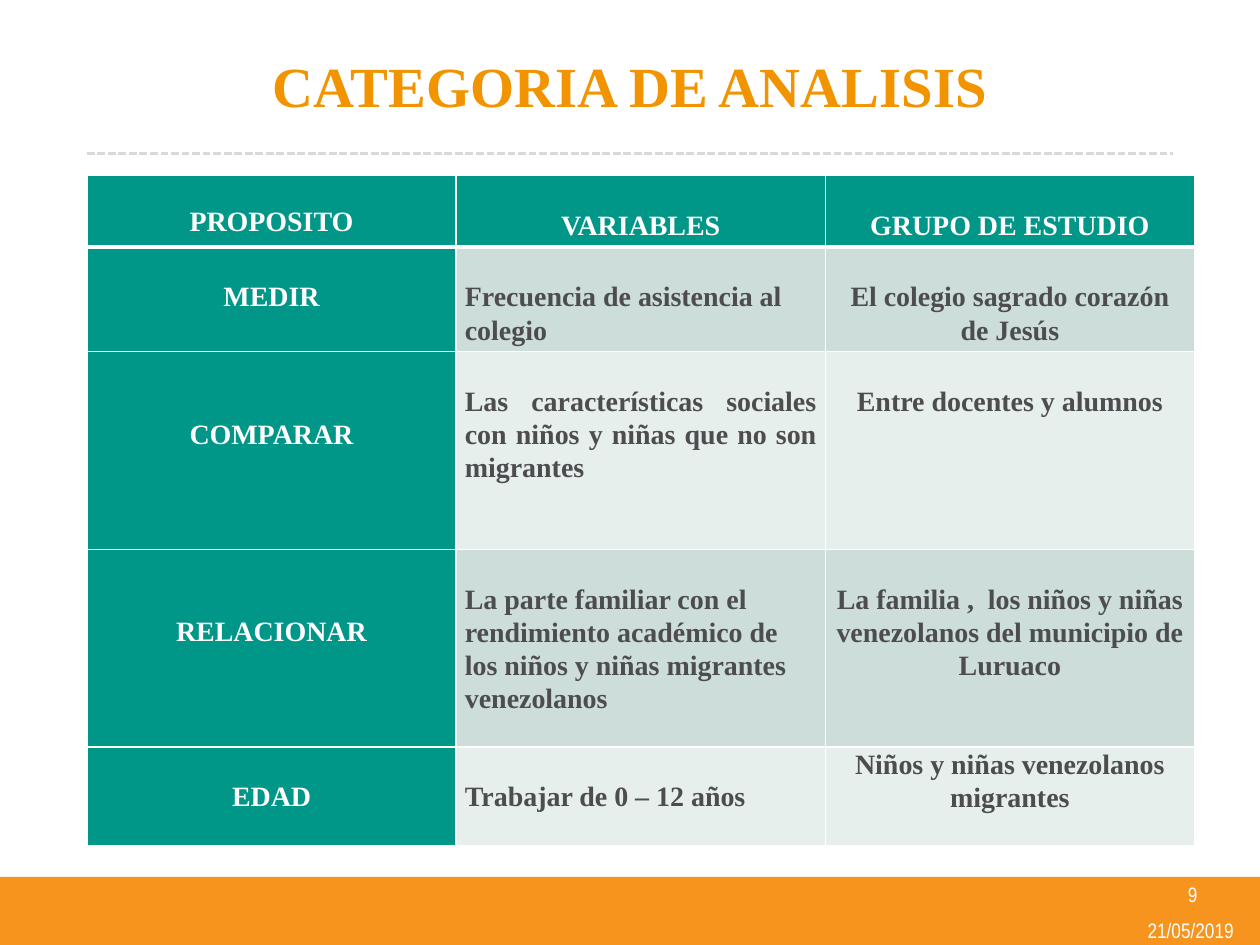
from dataclasses import dataclass

from lxml.etree import SubElement
from pptx import Presentation
from pptx.dml.color import RGBColor
from pptx.enum.dml import MSO_LINE
from pptx.enum.shapes import MSO_CONNECTOR, MSO_SHAPE
from pptx.enum.text import MSO_ANCHOR, PP_ALIGN
from pptx.oxml import parse_xml
from pptx.oxml.ns import nsdecls, qn
from pptx.util import Inches, Pt


@dataclass(frozen=True)
class Theme:
    orange: str = "F7941D"
    title: str = "F29400"
    teal: str = "009688"
    dark_band: str = "CCDDDA"
    light_band: str = "E7EFED"
    ink: str = "4D4D4F"
    white: str = "FFFFFF"
    rule: str = "D9D9D9"
    serif: str = "Times New Roman"
    narrow: str = "Arial Narrow"
    title_size: float = 32.4
    table_size: float = 16
    footer_size: float = 12


THEME = Theme()
LINE_HEIGHT = 0.26
COLUMN_WIDTH = 2.93
ROW_HEIGHTS = [0.57, 0.78, 1.57, 1.57, 0.78]
CENTER, LEFT, JUSTIFY = PP_ALIGN.CENTER, PP_ALIGN.LEFT, PP_ALIGN.JUSTIFY

# Each cell: text, alignment, lines of space above the text
ROWS = [
    [("PROPOSITO", CENTER, 0.88), ("VARIABLES", CENTER, 1), ("GRUPO DE ESTUDIO", CENTER, 1)],
    [("MEDIR", CENTER, 1),
     ("Frecuencia de asistencia al colegio", LEFT, 1),
     ("El colegio sagrado corazón de Jesús", CENTER, 1)],
    [("COMPARAR", CENTER, 2),
     ("Las características sociales con niños y niñas que no son migrantes", JUSTIFY, 1),
     ("Entre docentes y alumnos", CENTER, 1)],
    [("RELACIONAR", CENTER, 2),
     ("La parte familiar con el rendimiento académico de los niños y niñas migrantes venezolanos",
      LEFT, 1),
     ("La familia ,  los niños y niñas venezolanos del municipio de Luruaco", CENTER, 1)],
    [("EDAD", CENTER, 1),
     ("Trabajar de 0 – 12 años", LEFT, 1),
     ("Niños y niñas venezolanos migrantes", CENTER, 0)],
]


def apply_format(target, values):
    for name, value in values.items():
        setattr(target, name, value)


def write_text(text_frame, text, color, font_format, paragraph_format):
    paragraph = text_frame.paragraphs[0]
    apply_format(paragraph, paragraph_format)
    run = paragraph.add_run()
    run.text = text
    apply_format(run.font, font_format)
    run.font.color.rgb = RGBColor.from_string(color)


def add_text(slide, box, text, color, font_format):
    shape = slide.shapes.add_textbox(*map(Inches, box))
    apply_format(shape.text_frame, {
        "word_wrap": True, "vertical_anchor": MSO_ANCHOR.MIDDLE,
        "margin_top": 0, "margin_bottom": 0,
    })
    write_text(shape.text_frame, text, color, font_format, {"alignment": CENTER})


def add_bar(slide, box, color):
    shape = slide.shapes.add_shape(MSO_SHAPE.RECTANGLE, *map(Inches, box))
    shape.shadow.inherit = False
    shape.fill.solid()
    shape.fill.fore_color.rgb = RGBColor.from_string(color)
    shape.line.fill.background()


def add_dashed_rule(slide, left, right, top):
    connector = slide.shapes.add_connector(
        MSO_CONNECTOR.STRAIGHT, Inches(left), Inches(top), Inches(right), Inches(top))
    apply_format(connector.line, {"width": Pt(1.5), "dash_style": MSO_LINE.SQUARE_DOT})
    connector.line.color.rgb = RGBColor.from_string(THEME.rule)
    SubElement(connector.element.spPr, qn("a:effectLst"))


def add_borders(cell, widths):
    properties = cell._tc.get_or_add_tcPr()
    for position, (side, width) in enumerate(widths.items()):
        properties.insert(position, parse_xml(
            f'<a:ln{side} {nsdecls("a")} w="{Pt(width)}"><a:solidFill>'
            f'<a:srgbClr val="{THEME.white}"/></a:solidFill></a:ln{side}>'))


def cell_colors(row, column):
    if row == 0 or column == 0:
        return THEME.teal, THEME.white
    return (THEME.dark_band if row % 2 else THEME.light_band), THEME.ink


def fill_cell(cell, row, column, text, alignment, lines_above):
    background, color = cell_colors(row, column)
    apply_format(cell, {
        "margin_left": Inches(0.07), "margin_right": Inches(0.07),
        "margin_top": Inches(lines_above * LINE_HEIGHT), "margin_bottom": 0,
        "vertical_anchor": MSO_ANCHOR.TOP,
    })
    cell.fill.solid()
    cell.fill.fore_color.rgb = RGBColor.from_string(background)
    add_borders(cell, {"L": 1, "R": 1, "T": 3 if row == 1 else 1, "B": 3 if row == 0 else 1})
    write_text(cell.text_frame, text, color,
               {"name": THEME.serif, "size": Pt(THEME.table_size), "bold": True},
               {"alignment": alignment, "line_spacing": 1.07})


def add_category_table(slide, left, top):
    columns = len(ROWS[0])
    table = slide.shapes.add_table(
        len(ROWS), columns, Inches(left), Inches(top),
        Inches(COLUMN_WIDTH * columns), Inches(sum(ROW_HEIGHTS))).table
    for column in table.columns:
        column.width = Inches(COLUMN_WIDTH)
    for row, (height, contents) in enumerate(zip(ROW_HEIGHTS, ROWS)):
        table.rows[row].height = Inches(height)
        for column, content in enumerate(contents):
            fill_cell(table.cell(row, column), row, column, *content)


def main():
    presentation = Presentation()
    apply_format(presentation, {"slide_width": Inches(10), "slide_height": Inches(7.5)})
    slide = presentation.slides.add_slide(presentation.slide_layouts[6])
    footer_font = {"name": THEME.narrow, "size": Pt(THEME.footer_size)}
    title_font = {"name": THEME.serif, "size": Pt(THEME.title_size), "bold": True}

    add_bar(slide, (0, 6.96, 10, 0.56), THEME.orange)
    add_text(slide, (8.92, 7.28, 1.06, 0.21), "21/05/2019", THEME.white, footer_font)
    add_dashed_rule(slide, 0.69, 9.31, 1.22)
    add_text(slide, (0.69, 0.13, 8.62, 1.08), "CATEGORIA DE ANALISIS", THEME.title, title_font)
    add_category_table(slide, 0.69, 1.39)
    add_text(slide, (8.94, 6.95, 1.05, 0.3), "9", THEME.white, footer_font)
    presentation.save("out.pptx")


if __name__ == "__main__":
    main()
